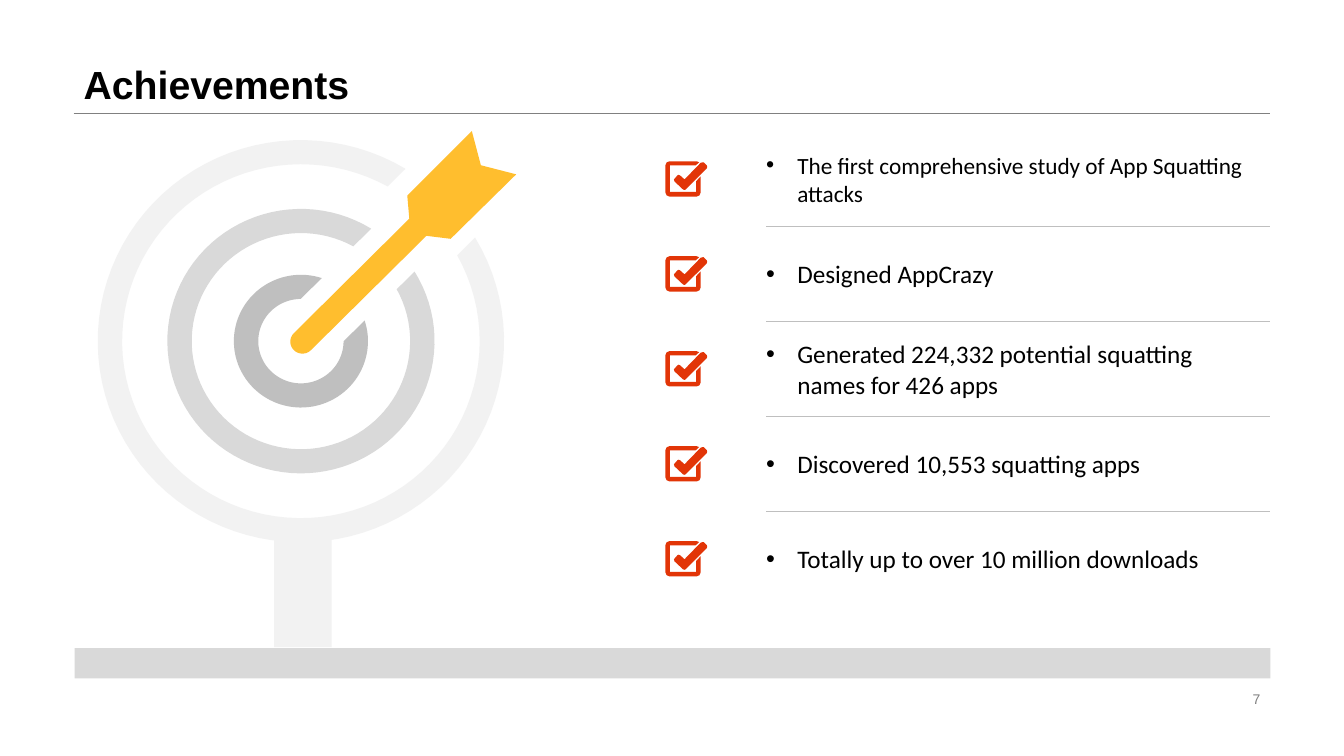
from math import asin, cos, degrees, radians, sin, sqrt

from lxml import etree
from pptx import Presentation
from pptx.dml.color import RGBColor
from pptx.enum.shapes import MSO_CONNECTOR, MSO_SHAPE
from pptx.enum.text import MSO_ANCHOR, MSO_AUTO_SIZE, PP_ALIGN
from pptx.oxml.ns import qn
from pptx.util import Inches, Pt

STRAIGHT = MSO_CONNECTOR.STRAIGHT
RECTANGLE = MSO_SHAPE.RECTANGLE
MIDDLE, BOTTOM = MSO_ANCHOR.MIDDLE, MSO_ANCHOR.BOTTOM
LEFT, RIGHT = PP_ALIGN.LEFT, PP_ALIGN.RIGHT
NO_FIT = MSO_AUTO_SIZE.NONE

BLACK = RGBColor(0x00, 0x00, 0x00)
GRAY = RGBColor(0x80, 0x80, 0x80)
MID_GRAY = RGBColor(0xBF, 0xBF, 0xBF)
LIGHT_GRAY = RGBColor(0xD9, 0xD9, 0xD9)
PALE_GRAY = RGBColor(0xF2, 0xF2, 0xF2)
AMBER = RGBColor(0xFF, 0xBE, 0x2E)
RED = RGBColor(0xE2, 0x35, 0x07)

WIDTH, HEIGHT = Inches(13.33), Inches(7.5)
COLUMNS, ROWS = 133.3, 75
LEFT_EDGE, RIGHT_EDGE = 7.3, 126
FIRST_ITEM_TOP, ITEM_PITCH = 14.7, 9.42
TARGET_X, TARGET_Y, ROUNDNESS = 29.85, 33.85, 0.99
RING_WIDTH = 2.42

RINGS = [(13.25, 4.3, LIGHT_GRAY), (6.65, 4.25, MID_GRAY), (20.15, 6.9, PALE_GRAY)]
ARROW_HEAD = [(42.3, 23.4), (44.7, 23.7), (51.2, 17.3), (47.7, 16.4),
              (46.8, 13), (40.4, 19.4), (40.6, 21.7)]
CHECK_MARK = [(3.7, 0.1), (3.8, 0.1), (4.1, 0.4), (4.15, 0.55), (4.1, 0.7),
              (2, 2.8), (1.9, 2.85), (1.75, 2.8), (0.9, 2), (0.85, 1.8),
              (1.2, 1.4), (1.3, 1.35), (1.45, 1.4), (1.9, 1.8), (3.5, 0.15)]
CHECK_BOX = [(0.4, 0), (3.1, 0), (3.35, 0.1), (3, 0.42), (0.44, 0.42),
             (0.44, 3.05), (3.05, 3.05), (3.05, 1.98), (3.5, 1.5), (3.5, 3.1),
             (3.38, 3.38), (3.1, 3.5), (0.4, 3.5), (0.12, 3.38), (0, 3.1),
             (0, 0.4), (0.12, 0.12)]
ITEMS = [("The first comprehensive study of App Squatting attacks", 16.6),
         ("Designed AppCrazy", 18),
         ("Generated 224,332 potential squatting names for 426 apps", 18),
         ("Discovered 10,553 squatting apps", 18),
         ("Totally up to over 10 million downloads", 18)]


def arc(center_x, center_y, radius, start, stop, steps=90):
    """Return points along an arc, with angles in degrees counted anticlockwise."""
    angles = [radians(start + (stop - start) * step / steps) for step in range(steps + 1)]
    return [(center_x + radius * cos(angle), center_y - ROUNDNESS * radius * sin(angle))
            for angle in angles]


def ring_outline(radius, half_gap):
    """Return the outline of a target ring left open along the arrow's diagonal."""
    inner = radius - RING_WIDTH
    outer_gap, inner_gap = (degrees(asin(half_gap / (r * sqrt(2)))) for r in (radius, inner))
    outside = arc(TARGET_X, TARGET_Y, radius, 45 + outer_gap, 405 - outer_gap)
    inside = arc(TARGET_X, TARGET_Y, inner, 405 - inner_gap, 45 + inner_gap)
    return outside + inside


class SlideBuilder:
    """Draw styled elements on one slide, placed by grid columns and rows."""

    def __init__(self, presentation):
        self.slide = presentation.slides.add_slide(presentation.slide_layouts[5])
        self.shapes = self.slide.shapes

    def x(self, columns):
        return round(WIDTH * columns / COLUMNS)

    def y(self, rows):
        return round(HEIGHT * rows / ROWS)

    def box(self, left, top, width, height):
        return self.x(left), self.y(top), self.x(width), self.y(height)

    def style_text(self, shape, text, size, font, color, anchor, align=LEFT, bold=False):
        frame = shape.text_frame
        frame.text = text
        frame.word_wrap = True
        frame.auto_size = NO_FIT
        frame.vertical_anchor = anchor
        paragraph = frame.paragraphs[0]
        paragraph.alignment = align
        style = paragraph.runs[0].font
        style.name, style.size, style.bold = font, Pt(size), bold
        style.color.rgb = color
        return paragraph

    def title(self, text, *place):
        shape = self.shapes.title
        shape.left, shape.top, shape.width, shape.height = self.box(*place)
        paragraph = self.style_text(shape, text, 28, "Arial", BLACK, BOTTOM, bold=True)
        paragraph.line_spacing = 0.9

    def text(self, text, place, size, font, color, align=LEFT):
        shape = self.shapes.add_textbox(*self.box(*place))
        return self.style_text(shape, text, size, font, color, MIDDLE, align)

    def bullet(self, text, place, size):
        paragraph = self.text(text, place, size, "Calibri", BLACK)
        properties = paragraph._p.get_or_add_pPr()
        properties.set("marL", str(self.x(3.1)))
        properties.set("indent", str(-self.x(3.1)))
        etree.SubElement(properties, qn("a:buFont"), typeface="Arial")
        etree.SubElement(properties, qn("a:buChar"), char="•")

    def fill(self, shape, color):
        shape.shadow.inherit = False
        shape.fill.solid()
        shape.fill.fore_color.rgb = color
        shape.line.fill.background()

    def rectangle(self, color, *place):
        self.fill(self.shapes.add_shape(RECTANGLE, *self.box(*place)), color)

    def outline(self, color, *contours, left=0, top=0):
        placed = [[(self.x(left + column), self.y(top + row)) for column, row in contour]
                  for contour in contours]
        builder = self.shapes.build_freeform(*placed[0][0])
        builder.add_line_segments(placed[0][1:])
        for contour in placed[1:]:
            builder.move_to(*contour[0])
            builder.add_line_segments(contour[1:])
        self.fill(builder.convert_to_shape(), color)

    def rule(self, color, start, stop, row):
        line = self.shapes.add_connector(
            STRAIGHT, self.x(start), self.y(row), self.x(stop), self.y(row))
        line.line.color.rgb = color
        line.line.width = Pt(0.25)
        etree.SubElement(line._element.spPr, qn("a:effectLst"))


def main():
    """Build the achievements slide and save it."""
    presentation = Presentation()
    presentation.slide_width, presentation.slide_height = WIDTH, HEIGHT
    builder = SlideBuilder(presentation)

    builder.rule(GRAY, LEFT_EDGE, RIGHT_EDGE, 11.2)
    builder.title("Achievements", LEFT_EDGE, 0, RIGHT_EDGE - LEFT_EDGE, 11.2)
    builder.text("7", (94.2, 68.2, 31.8, 2.3), 10, "Arial", GRAY, RIGHT)

    builder.rectangle(PALE_GRAY, 27.2, 53.5, 5.7, 10.7)
    builder.outline(AMBER, ARROW_HEAD + arc(30, 33.9, 1.2, 135, 315, 20))
    for radius, half_gap, color in RINGS:
        builder.outline(color, ring_outline(radius, half_gap))
    builder.rectangle(LIGHT_GRAY, 7.4, 64.3, RIGHT_EDGE - 7.4, 3)

    for index, (text, size) in enumerate(ITEMS):
        top = FIRST_ITEM_TOP + index * ITEM_PITCH
        builder.outline(RED, CHECK_MARK, CHECK_BOX, left=66, top=top + 1.3)
        builder.bullet(text, (75, top, 49.9, 6.1), size)
        if index < len(ITEMS) - 1:
            builder.rule(MID_GRAY, 76, RIGHT_EDGE, top + 7.75)

    presentation.save("out.pptx")


if __name__ == "__main__":
    main()
